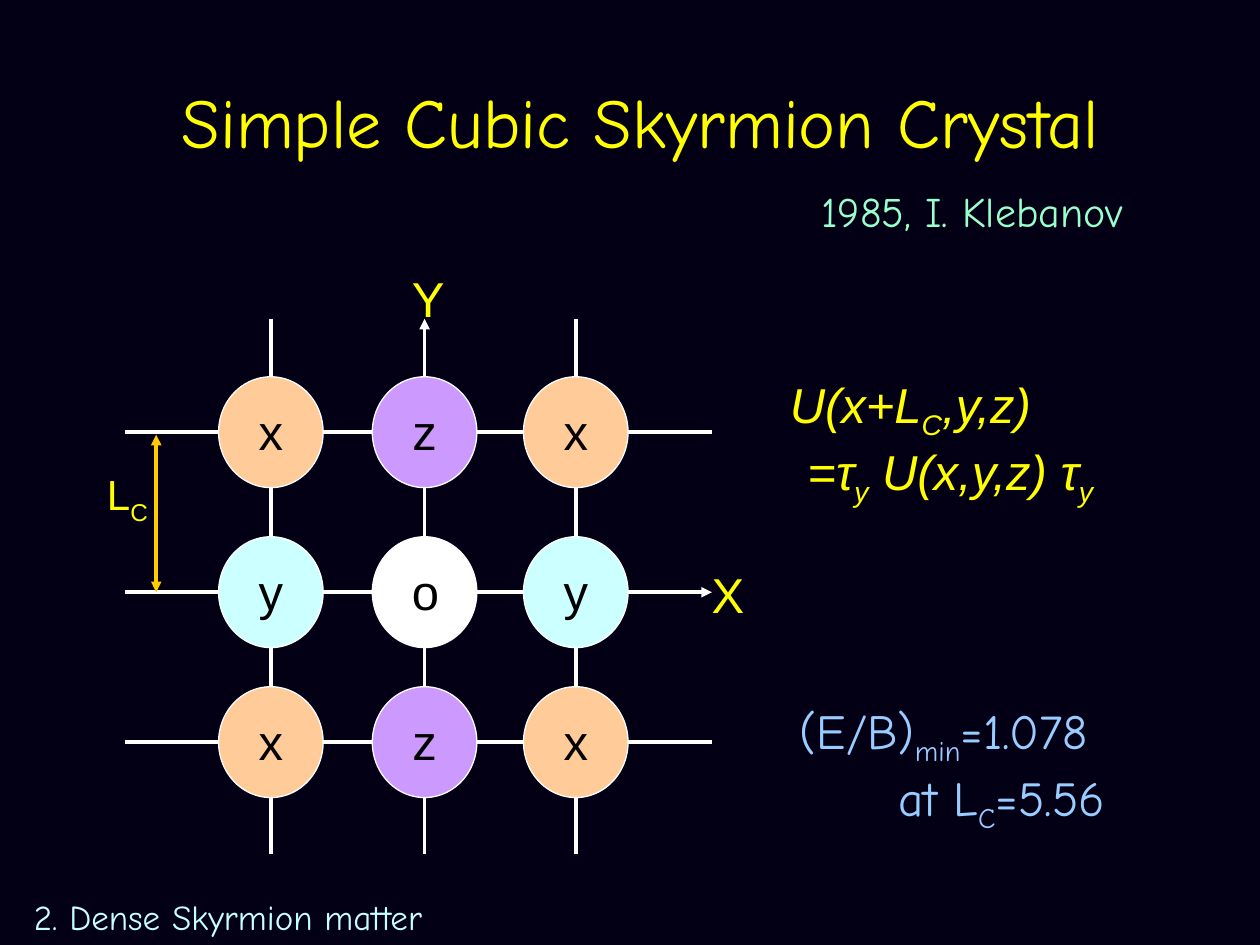
import pptx
import pptx.dml.color
import pptx.enum.shapes
import pptx.enum.text
import pptx.oxml.ns
import pptx.util
from lxml import etree

COLORS = {
    "night": "030015", "white": "FFFFFF", "black": "000000",
    "yellow": "FFFF00", "gold": "FFCC00", "mint": "99FFCC",
    "sky": "99CCFF", "ice": "C7FFFF",
    "x": "FFCC99", "y": "CCFFFF", "z": "CC99FF", "o": "FFFFFF",
}
ALIGN = pptx.enum.text.PP_ALIGN
SHAPES = pptx.enum.shapes
SANS, COMIC = "Arial", "Comic Neue"
COLUMNS, ROWS = 100, 75


def rgb(name):
    return pptx.dml.color.RGBColor.from_string(COLORS[name])


class CrystalSlide:
    """Style and current slide; lengths are columns and rows of the grid."""

    def __init__(self, deck):
        self.cell_w = deck.slide_width / COLUMNS
        self.cell_h = deck.slide_height / ROWS
        self.slide = deck.slides.add_slide(deck.slide_layouts[6])
        background = self.slide.background.fill
        background.solid()
        background.fore_color.rgb = rgb("night")

    def place(self, *lengths):
        """Turn alternating columns and rows into EMU."""
        return [round(n * (self.cell_h if i % 2 else self.cell_w))
                for i, n in enumerate(lengths)]

    def text(self, box, paragraphs, size, color, font=SANS, italic=False,
             align=ALIGN.LEFT, wrap=False, indents=(), middle=False):
        """Each paragraph lists its runs; a run starting with _ is a subscript."""
        frame = self.slide.shapes.add_textbox(*self.place(*box)).text_frame
        frame.word_wrap = wrap
        if middle:
            frame.vertical_anchor = pptx.enum.text.MSO_ANCHOR.MIDDLE
        else:
            frame.auto_size = pptx.enum.text.MSO_AUTO_SIZE.SHAPE_TO_FIT_TEXT
        for i, runs in enumerate(paragraphs):
            paragraph = frame.paragraphs[0] if i == 0 else frame.add_paragraph()
            paragraph.alignment = align
            if i < len(indents):
                margin = self.place(indents[i])[0]
                paragraph._p.get_or_add_pPr().set("marL", str(margin))
            for part in runs:
                run = paragraph.add_run()
                run.text = part.removeprefix("_")
                run.font.size = pptx.util.Pt(size)
                run.font.name = font
                run.font.italic = italic
                run.font.color.rgb = rgb(color)
                if part.startswith("_"):
                    run._r.get_or_add_rPr().set("baseline", "-25000")

    def line(self, start, end, color="white", arrows=()):
        """arrows may hold headEnd (at start) and tailEnd (at end)."""
        connector = self.slide.shapes.add_connector(
            SHAPES.MSO_CONNECTOR.STRAIGHT, *self.place(*start, *end))
        connector.line.color.rgb = rgb(color)
        connector.line.width = pptx.util.Pt(2)
        qn = pptx.oxml.ns.qn
        for arrow in arrows:
            etree.SubElement(connector.line._get_or_add_ln(),
                             qn(f"a:{arrow}"), type="triangle")
        etree.SubElement(connector._element.spPr, qn("a:effectLst"))

    def atom(self, column, row, kind):
        width, height = 8.3, 8.8
        circle = self.slide.shapes.add_shape(
            SHAPES.MSO_SHAPE.OVAL,
            *self.place(column - width / 2, row - height / 2, width, height))
        circle.shadow.inherit = False
        circle.fill.solid()
        circle.fill.fore_color.rgb = rgb(kind)
        circle.line.color.rgb = rgb("white")
        circle.line.width = pptx.util.Pt(0.75)
        self.text((column - 2, row - 2.9, 4, 5.7), [[kind]], 28, "black",
                  align=ALIGN.CENTER)


def draw_lattice(page):
    columns, rows = (21.5, 33.7, 45.7), (34.3, 47, 58.9)
    top, bottom, left, right = 25.3, 67.8, 9.9, 56.5
    for column in columns:
        page.line((column, top), (column, bottom),
                  arrows=["headEnd"] if column == columns[1] else ())
    for row in rows:
        page.line((left, row), (right, row),
                  arrows=["tailEnd"] if row == rows[1] else ())
    for row, kinds in zip(rows, ("xzx", "yoy", "xzx")):
        for column, kind in zip(columns, kinds):
            page.atom(column, row, kind)
    page.text((31.7, 20.8, 4.6, 5.7), [["Y"]], 28, "yellow")
    page.text((55.5, 44.3, 4.6, 5.7), [["X"]], 28, "yellow")
    page.line((12.4, rows[0] + 0.2), (12.4, rows[1]), "gold",
              ["headEnd", "tailEnd"])
    page.text((7.5, 36.7, 5.5, 5), [["L", "_C"]], 24, "yellow")


def main():
    deck = pptx.Presentation()
    deck.slide_width = pptx.util.Inches(10)
    deck.slide_height = pptx.util.Inches(7.5)
    page = CrystalSlide(deck)
    page.text((8.3, 3.3, 85, 12.5), [["Simple Cubic Skyrmion Crystal"]], 40,
              "yellow", COMIC, align=ALIGN.CENTER, wrap=True, middle=True)
    page.text((64.2, 14.2, 28.7, 5), [["1985, I. Klebanov"]], 24, "mint", COMIC)
    draw_lattice(page)
    page.text((61.7, 29.2, 28.2, 10.3),
              [["U(x+L", "_C", ",y,z)"],
               ["=τ", "_y", " U(x,y,z) τ", "_y"]],
              28, "yellow", italic=True, wrap=True, indents=(0, 1.4))
    page.text((62.5, 55.1, 27.8, 10.3),
              [["(E/B)", "_min", "=1.078"], ["at L", "_C", "=5.56"]],
              28, "sky", COMIC, wrap=True, indents=(0, 7.8))
    page.text((0, 70.6, 36.2, 4.4), [["2. Dense Skyrmion matter"]], 20, "ice",
              COMIC, align=ALIGN.CENTER)
    deck.save("out.pptx")


if __name__ == "__main__":
    main()
